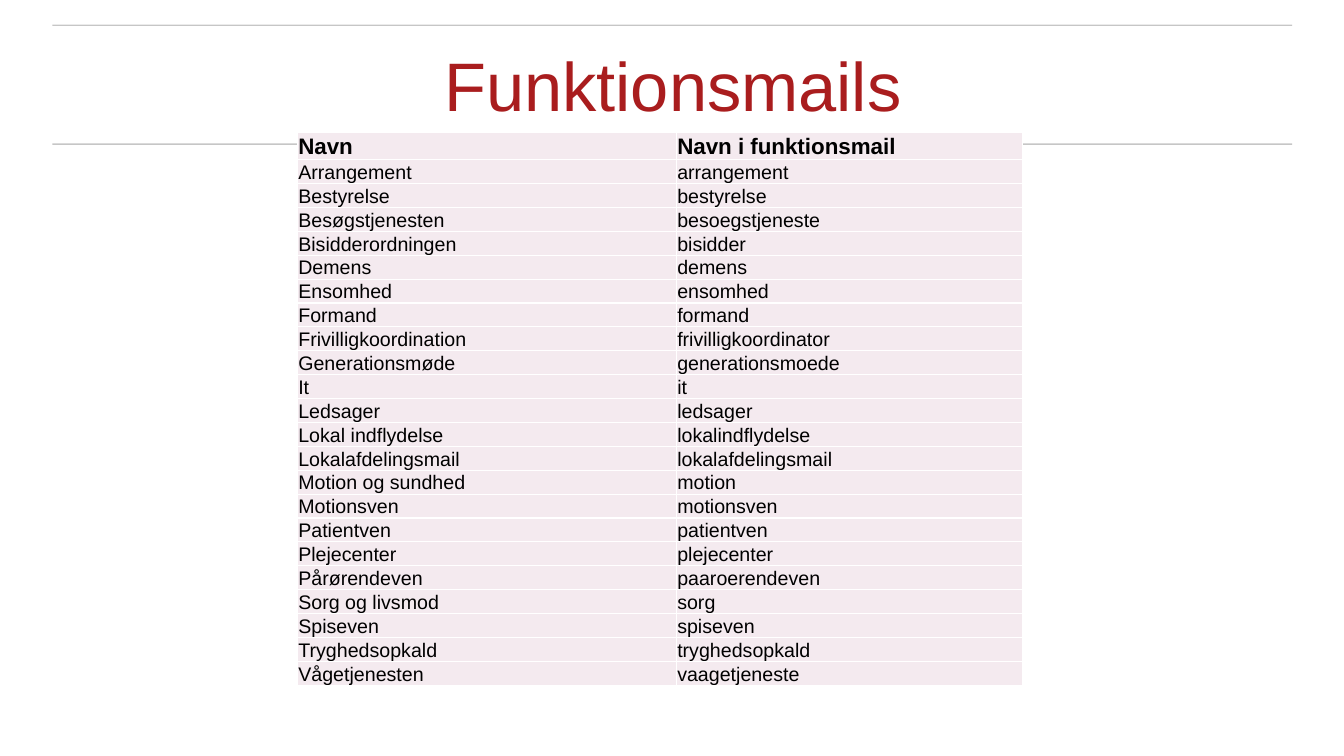
from lxml.etree import SubElement
from pptx import Presentation
from pptx.dml.color import RGBColor
from pptx.enum.shapes import MSO_CONNECTOR
from pptx.enum.text import MSO_ANCHOR, PP_ALIGN
from pptx.oxml.ns import qn
from pptx.util import Pt

TITLE = "Funktionsmails"
ROWS = [
    ("Navn", "Navn i funktionsmail"),
    ("Arrangement", "arrangement"),
    ("Bestyrelse", "bestyrelse"),
    ("Besøgstjenesten", "besoegstjeneste"),
    ("Bisidderordningen", "bisidder"),
    ("Demens", "demens"),
    ("Ensomhed", "ensomhed"),
    ("Formand", "formand"),
    ("Frivilligkoordination", "frivilligkoordinator"),
    ("Generationsmøde", "generationsmoede"),
    ("It", "it"),
    ("Ledsager", "ledsager"),
    ("Lokal indflydelse", "lokalindflydelse"),
    ("Lokalafdelingsmail", "lokalafdelingsmail"),
    ("Motion og sundhed", "motion"),
    ("Motionsven", "motionsven"),
    ("Patientven", "patientven"),
    ("Plejecenter", "plejecenter"),
    ("Pårørendeven", "paaroerendeven"),
    ("Sorg og livsmod", "sorg"),
    ("Spiseven", "spiseven"),
    ("Tryghedsopkald", "tryghedsopkald"),
    ("Vågetjenesten", "vaagetjeneste"),
]

RED = RGBColor(0xA9, 0x1D, 0x1E)
BLACK = RGBColor(0x00, 0x00, 0x00)
WHITE = RGBColor(0xFF, 0xFF, 0xFF)
PINK = RGBColor(0xF4, 0xEA, 0xEF)
GRAY = RGBColor(0x44, 0x44, 0x44)

RULE_LEFT, RULE_RIGHT = 37.5, 923
RULE_TOPS = (18, 103)
TABLE_LEFT, TABLE_TOP = 212.6, 94.6
COLUMN_WIDTHS = (270.7, 247)
HEADER_HEIGHT, ROW_HEIGHT = 17.9, 16.33


def write_text(frame, text, size, color=BLACK, bold=False, align=PP_ALIGN.LEFT):
    paragraph = frame.paragraphs[0]
    paragraph.alignment = align
    run = paragraph.add_run()
    run.text = text
    run.font.name = "Arial"
    run.font.size = Pt(size)
    run.font.bold = bold
    run.font.color.rgb = color


def add_rule(slide, top):
    rule = slide.shapes.add_connector(
        MSO_CONNECTOR.STRAIGHT, Pt(RULE_LEFT), Pt(top), Pt(RULE_RIGHT), Pt(top))
    rule.line.width = Pt(1)
    rule.line.color.rgb = GRAY
    properties = rule._element.spPr
    color = properties.find(".//" + qn("a:srgbClr"))
    SubElement(color, qn("a:alpha"), val="30000")
    SubElement(properties, qn("a:effectLst"))


def add_title(slide):
    box = slide.shapes.add_textbox(Pt(38.2), Pt(18.7), Pt(884.9), Pt(76.3))
    frame = box.text_frame
    frame.word_wrap = True
    frame.vertical_anchor = MSO_ANCHOR.MIDDLE
    frame.margin_left = frame.margin_right = frame.margin_bottom = 0
    frame.margin_top = Pt(7)
    write_text(frame, TITLE, 49, color=RED, align=PP_ALIGN.CENTER)


def set_borders(cell):
    properties = cell._tc.get_or_add_tcPr()
    for index, side in enumerate(("lnL", "lnR", "lnT", "lnB")):
        border = properties.makeelement(qn("a:" + side), {"w": str(Pt(1))})
        fill = SubElement(border, qn("a:solidFill"))
        SubElement(fill, qn("a:srgbClr"), val=str(WHITE))
        properties.insert(index, border)


def add_mail_table(slide):
    heights = [HEADER_HEIGHT] + [ROW_HEIGHT] * (len(ROWS) - 1)
    table = slide.shapes.add_table(
        len(ROWS), len(COLUMN_WIDTHS), Pt(TABLE_LEFT), Pt(TABLE_TOP),
        Pt(sum(COLUMN_WIDTHS)), Pt(sum(heights))).table
    for column, width in zip(table.columns, COLUMN_WIDTHS):
        column.width = Pt(width)
    for row_index, (row, height, texts) in enumerate(zip(table.rows, heights, ROWS)):
        row.height = Pt(height)
        is_header = row_index == 0
        for cell, text in zip(row.cells, texts):
            cell.margin_left = cell.margin_right = Pt(0.5)
            cell.margin_top = Pt(0.24)
            cell.margin_bottom = 0
            cell.vertical_anchor = MSO_ANCHOR.BOTTOM
            cell.fill.solid()
            cell.fill.fore_color.rgb = PINK
            set_borders(cell)
            write_text(cell.text_frame, text, 16 if is_header else 14, bold=is_header)


def main():
    presentation = Presentation()
    presentation.slide_width = Pt(960)
    presentation.slide_height = Pt(540)
    slide = presentation.slides.add_slide(presentation.slide_layouts[6])
    for top in RULE_TOPS:
        add_rule(slide, top)
    add_title(slide)
    add_mail_table(slide)
    presentation.save("out.pptx")


if __name__ == "__main__":
    main()
